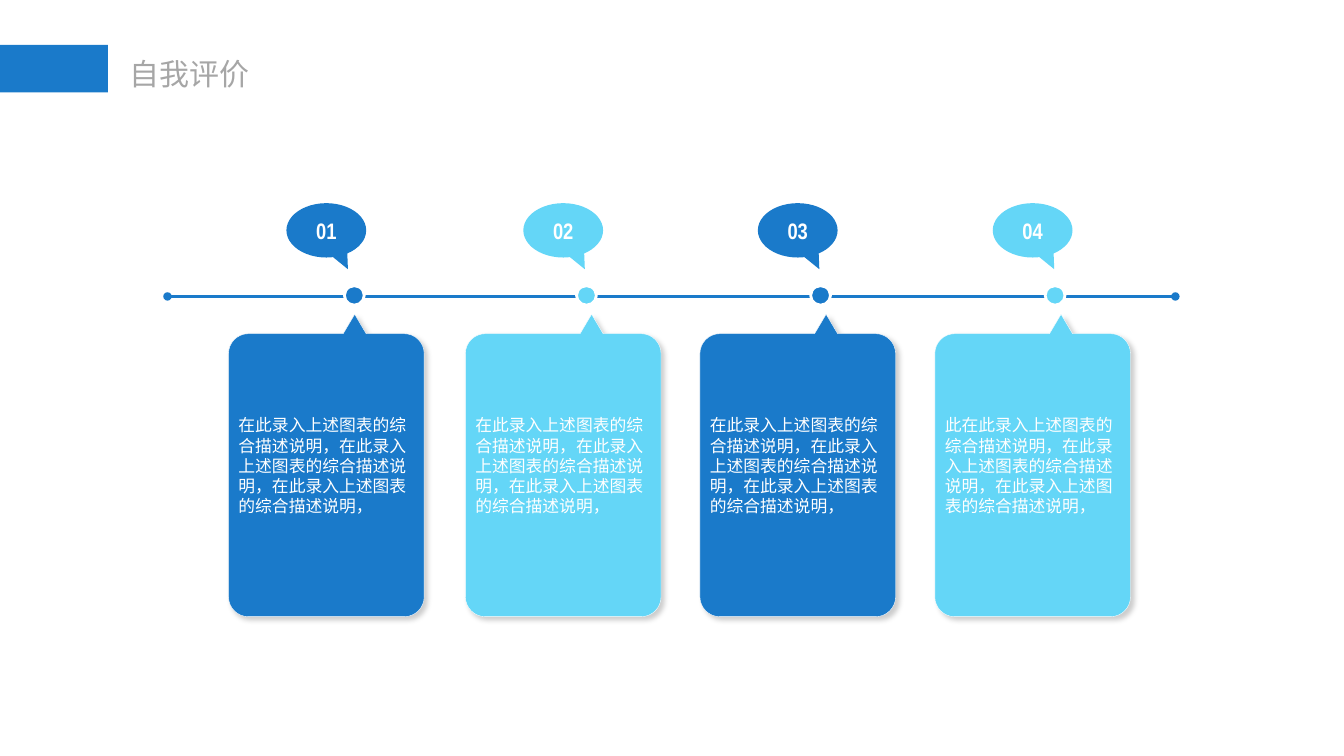
from lxml.etree import SubElement
from pptx import Presentation
from pptx.dml.color import RGBColor
from pptx.enum.shapes import MSO_CONNECTOR, MSO_SHAPE
from pptx.enum.text import MSO_ANCHOR, MSO_AUTO_SIZE, PP_ALIGN
from pptx.oxml.ns import qn
from pptx.util import Cm, Pt

BLUE = RGBColor(0x1A, 0x7A, 0xCA)
SKY = RGBColor(0x64, 0xD6, 0xF7)
GRAY = RGBColor(0xA6, 0xA6, 0xA6)
WHITE = RGBColor(0xFF, 0xFF, 0xFF)
HAN = "Noto Sans CJK SC"
LATIN = "Arial Narrow"
LINE = "在此录入上述图表的综合描述说明，"
STEPS = [(0, 0, LINE * 3), (5.97, 5.85, LINE * 3),
         (11.88, 11.75, LINE * 3), (17.8, 17.66, "此" + LINE * 3)]


def paint(shape, fill, edge=None, width=0):
    shape.shadow.inherit = False
    shape.fill.solid()
    shape.fill.fore_color.rgb = fill
    if edge is None:
        shape.line.fill.background()
    else:
        shape.line.color.rgb = edge
        shape.line.width = Pt(width)


def write(shape, text, size, face, color, align, bold=False):
    frame = shape.text_frame
    frame.text = text
    frame.vertical_anchor = MSO_ANCHOR.MIDDLE
    para = frame.paragraphs[0]
    para.alignment = align
    font = para.runs[0].font
    font.size = Pt(size)
    font.bold = bold
    font.color.rgb = color
    font.name = face
    SubElement(para.runs[0]._r.get_or_add_rPr(), qn("a:ea"), typeface=face)
    return frame


def cast(shape):
    effects = shape._element.spPr.find(qn("a:effectLst"))
    shade = SubElement(effects, qn("a:outerShdw"), blurRad=str(Pt(4)),
                       dist=str(Pt(3)), dir="2700000", algn="tl", rotWithShape="0")
    tint = SubElement(shade, qn("a:srgbClr"), val="000000")
    SubElement(tint, qn("a:alpha"), val="20000")


def bend(shape, turns):
    points = list(shape._element.iter(qn("a:pt")))
    spots = [(int(p.get("x")), int(p.get("y"))) for p in points]
    for turn in turns:
        (x1, y1), (x2, y2) = spots[turn - 1:turn + 1]
        peak = (x2, y1) if y1 in (spots[turn - 2][1],) else (x1, y2)
        part = points[turn].getparent()
        curve = part.makeelement(qn("a:cubicBezTo"))
        for x, y in ((x1, y1), (x2, y2)):
            SubElement(curve, qn("a:pt"), x=str(round(x + 0.55 * (peak[0] - x))),
                       y=str(round(y + 0.55 * (peak[1] - y))))
        SubElement(curve, qn("a:pt"), x=str(x2), y=str(y2))
        part.getparent().replace(part, curve)


def add_head(slide, left, top, width, height):
    bar = slide.shapes.add_shape(MSO_SHAPE.RECTANGLE, Cm(left), Cm(top),
                                 Cm(width), Cm(height))
    paint(bar, BLUE)
    title = slide.shapes.title
    title.left, title.top = Cm(left + width + 0.27), Cm(top + 0.13)
    title.width, title.height = Cm(3.56), Cm(1.17)
    frame = write(title, "自我评价", 21.4, HAN, GRAY, PP_ALIGN.CENTER)
    frame.word_wrap = False
    frame.auto_size = MSO_AUTO_SIZE.NONE


def add_axis(slide, left, top, width):
    axis = slide.shapes.add_connector(MSO_CONNECTOR.STRAIGHT, Cm(left), Cm(top),
                                      Cm(left + width), Cm(top))
    axis.line.color.rgb = BLUE
    axis.line.width = Pt(2)
    pen = axis.line._get_or_add_ln()
    for end in ("a:headEnd", "a:tailEnd"):
        SubElement(pen, qn(end), type="oval")
    SubElement(axis._element.spPr, qn("a:effectLst"))


def add_dot(slide, left, top, color):
    dot = slide.shapes.add_shape(MSO_SHAPE.OVAL, Cm(left), Cm(top), Cm(0.5), Cm(0.49))
    paint(dot, color, WHITE, 2)


def add_label(slide, left, top, text, color):
    label = slide.shapes.add_shape(MSO_SHAPE.OVAL_CALLOUT, Cm(left), Cm(top),
                                   Cm(2.01), Cm(1.37))
    label.adjustments[0] = 0.271
    label.adjustments[1] = 0.716
    paint(label, color)
    frame = write(label, text, 16, LATIN, WHITE, PP_ALIGN.CENTER, True)
    frame.margin_left = frame.margin_right = 0
    frame.margin_top = frame.margin_bottom = 0


def add_card(slide, left, top, width, height, text, color):
    tip, half, curve = left + 3.18, 0.29, 0.5
    right, base, roof = left + width, top + height, top + 0.49
    points = [(tip + half, roof),
              (right - curve, roof), (right, roof + curve),
              (right, base - curve), (right - curve, base),
              (left + curve, base), (left, base - curve),
              (left, roof + curve), (left + curve, roof),
              (tip - half, roof)]
    pen = slide.shapes.build_freeform(Cm(tip), Cm(top))
    pen.add_line_segments([(Cm(x), Cm(y)) for x, y in points], close=True)
    card = pen.convert_to_shape()
    bend(card, (3, 5, 7, 9))
    paint(card, color, WHITE, 0.25)
    cast(card)
    frame = write(card, text, 12, HAN, WHITE, PP_ALIGN.LEFT)
    frame.word_wrap = True


def add_steps(slide, left, top, width, height):
    for i, (shift, mark, note) in enumerate(STEPS):
        color = SKY if i % 2 else BLUE
        x = left + shift
        add_dot(slide, left + 2.92 + mark, top + 2.08, color)
        add_label(slide, x + 1.46, top, f"{i + 1:02}", color)
        add_card(slide, x, top + 2.8, width, height - 2.8, note, color)


def main():
    deck = Presentation()
    deck.slide_width, deck.slide_height = Cm(33.87), Cm(19.05)
    slide = deck.slides.add_slide(deck.slide_layouts[5])
    add_head(slide, 0, 1.13, 2.72, 1.2)
    add_axis(slide, 4.22, 7.47, 25.4)
    add_steps(slide, 5.76, 5.12, 4.93, 10.42)
    deck.save("out.pptx")


if __name__ == "__main__":
    main()
